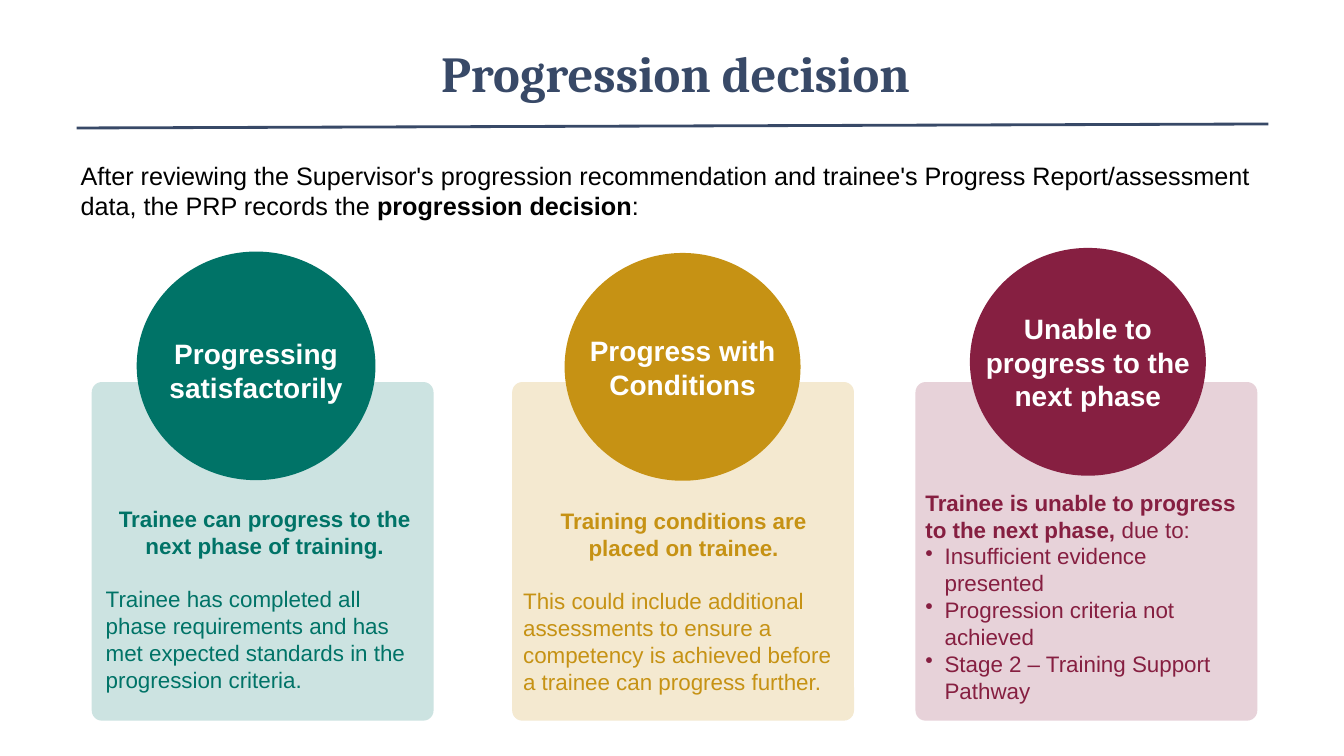
from dataclasses import dataclass

import pptx
import pptx.dml.color
import pptx.enum.shapes
import pptx.enum.text
import pptx.oxml.ns
import pptx.shapes.autoshape
import pptx.shapes.shapetree
import pptx.slide
import pptx.util
from lxml import etree

EMU_PER_PX = 9144  # 100 px to the inch
ALIGN = pptx.enum.text.PP_ALIGN
SHAPE = pptx.enum.shapes.MSO_SHAPE


@dataclass(frozen=True)
class Theme:
    navy: str = "384967"
    black: str = "000000"
    white: str = "FFFFFF"
    green: str = "007367"
    pale_green: str = "CCE3E1"
    gold: str = "C69214"
    pale_gold: str = "F4E9D0"
    maroon: str = "861F41"
    pale_maroon: str = "E7D2D9"
    title_font: str = "Cambria"
    body_font: str = "Arial"
    title_size: int = 36
    label_size: int = 20
    intro_size: int = 18
    card_size: int = 16
    line_gap: float = 19.2
    rule_width: int = 2


THEME = Theme()


@dataclass(frozen=True)
class Box:
    left: int
    top: int
    width: int
    height: int

    def emu(self) -> list[int]:
        return [px(value) for value in (self.left, self.top, self.width, self.height)]


@dataclass(frozen=True)
class Run:
    text: str
    bold: bool = False


@dataclass(frozen=True)
class Paragraph:
    runs: tuple[Run, ...]
    align: ALIGN = ALIGN.LEFT
    space_before: float = 0
    bullet: bool = False


@dataclass(frozen=True)
class Card:
    color: str
    pale: str
    panel_left: int
    circle: Box
    label: str
    label_box: Box
    body_box: Box
    body: tuple[Paragraph, ...]
    outlined: bool = False


def px(value: int) -> int:
    return pptx.util.Emu(value * EMU_PER_PX)


def rgb(value: str) -> pptx.dml.color.RGBColor:
    return pptx.dml.color.RGBColor.from_string(value)


def add_bullet(paragraph, indent: int) -> None:
    properties = paragraph._p.get_or_add_pPr()
    properties.set("marL", str(px(indent)))
    properties.set("indent", str(-px(indent)))
    bullet = etree.SubElement(properties, pptx.oxml.ns.qn("a:buChar"))
    bullet.set("char", "•")


def add_text(
    shapes: pptx.shapes.shapetree.SlideShapes,
    box: Box,
    paragraphs: tuple[Paragraph, ...],
    *,
    size: int,
    color: str,
    font: str = THEME.body_font,
    grow: bool = True,
    anchor=pptx.enum.text.MSO_ANCHOR.TOP,
) -> None:
    frame = shapes.add_textbox(*box.emu()).text_frame
    frame.word_wrap = True
    frame.vertical_anchor = anchor
    if grow:
        frame.auto_size = pptx.enum.text.MSO_AUTO_SIZE.SHAPE_TO_FIT_TEXT
    for index, content in enumerate(paragraphs):
        paragraph = frame.add_paragraph() if index else frame.paragraphs[0]
        paragraph.alignment = content.align
        if content.space_before:
            paragraph.space_before = pptx.util.Pt(content.space_before)
        if content.bullet:
            add_bullet(paragraph, 19)
        for part in content.runs:
            run = paragraph.add_run()
            run.text = part.text
            run.font.name = font
            run.font.size = pptx.util.Pt(size)
            run.font.bold = part.bold
            run.font.color.rgb = rgb(color)


def add_filled(shapes, kind: SHAPE, box: Box, color: str) -> pptx.shapes.autoshape.Shape:
    shape = shapes.add_shape(kind, *box.emu())
    shape.shadow.inherit = False
    shape.fill.solid()
    shape.fill.fore_color.rgb = rgb(color)
    shape.line.fill.background()
    return shape


def add_rule(slide: pptx.slide.Slide) -> None:
    rule = slide.shapes.add_connector(
        pptx.enum.shapes.MSO_CONNECTOR.STRAIGHT, px(76), px(127), px(1258), px(123))
    rule.line.color.rgb = rgb(THEME.navy)
    rule.line.width = pptx.util.Pt(THEME.rule_width)
    etree.SubElement(rule._element.spPr, pptx.oxml.ns.qn("a:effectLst"))


def add_card(slide: pptx.slide.Slide, card: Card) -> None:
    panel = add_filled(slide.shapes, SHAPE.ROUNDED_RECTANGLE,
                       Box(card.panel_left, 379, 339, 336), card.pale)
    panel.adjustments[0] = 0.03
    badge = slide.shapes.add_group_shape()
    circle = add_filled(badge.shapes, SHAPE.OVAL, card.circle, card.color)
    if card.outlined:
        circle.line.color.rgb = rgb(card.color)
        circle.line.width = pptx.util.Pt(THEME.rule_width)
    add_text(badge.shapes, card.label_box, (Paragraph((Run(card.label, True),), ALIGN.CENTER),),
             size=THEME.label_size, color=THEME.white)
    add_text(slide.shapes, card.body_box, card.body, size=THEME.card_size, color=card.color)


def outcome(headline: str, detail: str) -> tuple[Paragraph, ...]:
    """Centred bold headline, then a detail paragraph one line lower."""
    return (Paragraph((Run(headline, True),), ALIGN.CENTER),
            Paragraph((Run(detail),), space_before=THEME.line_gap))


REASONS = ("Insufficient evidence presented", "Progression criteria not achieved",
           "Stage 2 – Training Support Pathway")

CARDS = (
    Card(THEME.green, THEME.pale_green, 91, Box(137, 251, 234, 224),
         "Progressing satisfactorily", Box(137, 329, 234, 77), Box(95, 496, 335, 199),
         outcome("Trainee can progress to the next phase of training.",
                 "Trainee has completed all phase requirements and has met expected "
                 "standards in the progression criteria."),
         outlined=True),
    Card(THEME.gold, THEME.pale_gold, 508, Box(560, 251, 234, 226),
         "Progress with Conditions", Box(560, 326, 234, 69), Box(509, 498, 338, 199),
         outcome("Training conditions are placed on trainee.",
                 "This could include additional assessments to ensure a competency is "
                 "achieved before a trainee can progress further.")),
    Card(THEME.maroon, THEME.pale_maroon, 908, Box(962, 246, 234, 226),
         "Unable to progress to the next phase", Box(962, 304, 234, 111),
         Box(908, 480, 339, 226),
         (Paragraph((Run("Trainee is unable to progress to the next phase, ", True),
                     Run("due to:"))),
          *(Paragraph((Run(reason),), bullet=True) for reason in REASONS))),
)

INTRO = Paragraph((
    Run("After reviewing the Supervisor's progression recommendation and trainee's "
        "Progress Report/assessment data, the PRP records the "),
    Run("progression decision", True),
    Run(":"),
))


def main() -> None:
    presentation = pptx.Presentation()
    presentation.slide_width, presentation.slide_height = px(1333), px(750)
    slide = presentation.slides.add_slide(presentation.slide_layouts[6])
    add_rule(slide)
    add_text(slide.shapes, Box(0, 32, 1340, 79),
             (Paragraph((Run("Progression decision", True),), ALIGN.CENTER),),
             size=THEME.title_size, color=THEME.navy, font=THEME.title_font,
             grow=False, anchor=pptx.enum.text.MSO_ANCHOR.MIDDLE)
    for card in CARDS:
        add_card(slide, card)
    add_text(slide.shapes, Box(70, 154, 1188, 71), (INTRO,),
             size=THEME.intro_size, color=THEME.black)
    presentation.save("out.pptx")


if __name__ == "__main__":
    main()
